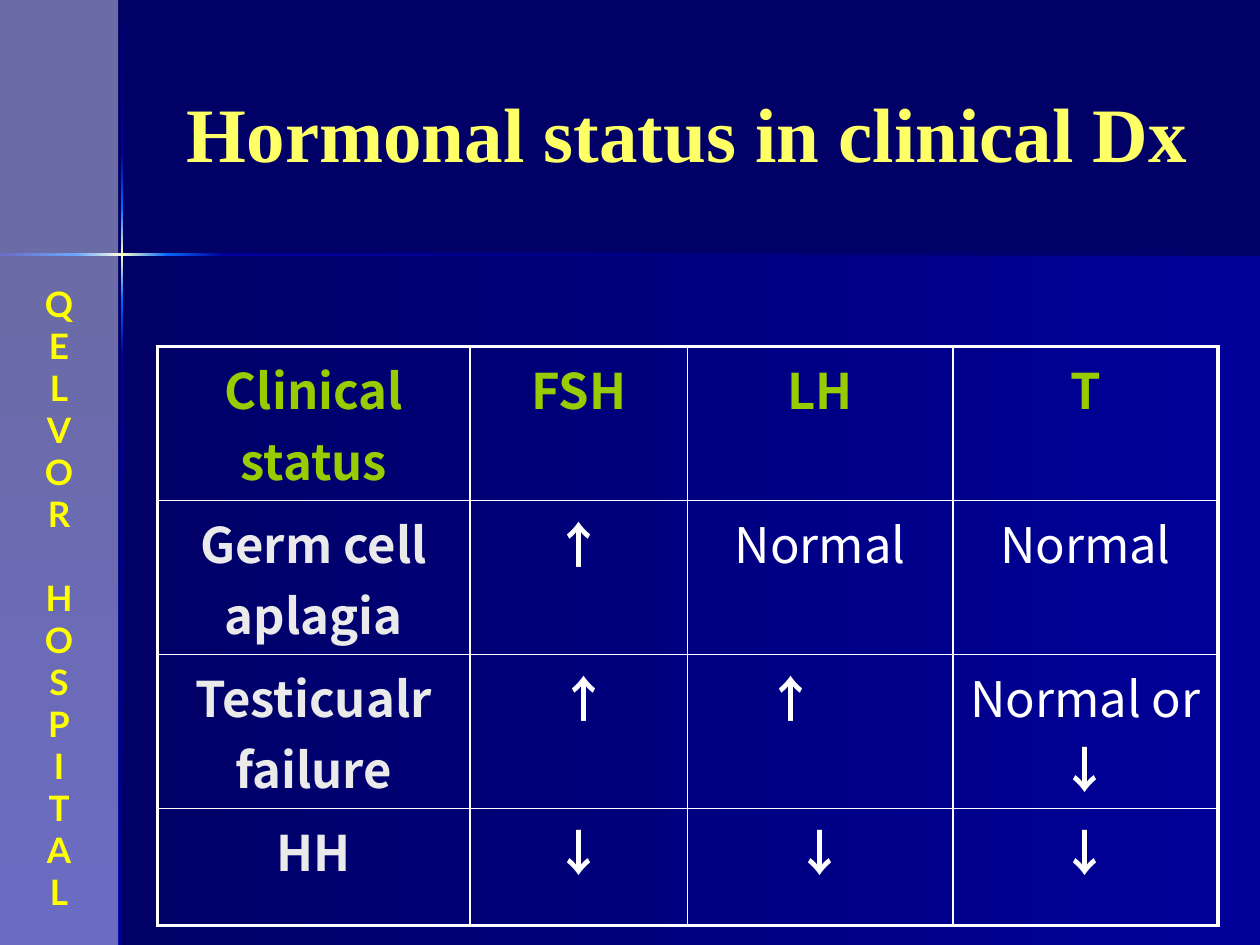
from itertools import pairwise
from lxml.etree import SubElement as Sub
from pptx import Presentation
from pptx.dml.color import RGBColor
from pptx.enum.shapes import MSO_SHAPE as SHAPE
from pptx.enum.text import MSO_ANCHOR as ANCHOR, PP_ALIGN as ALIGN
from pptx.oxml.ns import qn
from pptx.util import Pt


def rgb(code):
    return RGBColor.from_string(code)


def put_run(p, text, size, name, color, bold):
    r = p.add_run()
    r.text = text
    for key, value in dict(size=Pt(size), name=name, bold=bold).items():
        setattr(r.font, key, value)
    r.font.color.rgb = rgb(color)
    Sub(r.font._element, qn("a:ea"), typeface=name)


NAVY, BLUE, AZURE, CREAM, WHITE = "000066", "000099", "0066FF", "FFFFCC", "FFFFFF"
SANS = "Noto Sans CJK KR"

prs = Presentation()
prs.slide_width, prs.slide_height = Pt(720), Pt(540)
s = prs.slides.add_slide(prs.slide_layouts[5])
s.background.fill.solid()
s.background.fill.fore_color.rgb = rgb(NAVY)

bands = [
    (69.84, 145.44, 650.16, 394.56, NAVY, BLUE, 0),
    (0, 145.44, 69.84, 394.56, NAVY, BLUE, 270),
]
column_stops = [(0.7, NAVY), (87.1, BLUE), (118.8, AZURE), (145.1, CREAM),
                (171.4, AZURE), (203, BLUE), (540, NAVY)]
row_stops = [(0, BLUE), (43.5, AZURE), (69.6, CREAM),
             (95.8, AZURE), (127.4, BLUE), (720, NAVY)]
for (y0, c0), (y1, c1) in pairwise(column_stops):
    bands.append((69.1, y0, 1.44, y1 - y0, c0, c1, 270))
for (x0, c0), (x1, c1) in pairwise(row_stops):
    bands.append((x0, 144.7, x1 - x0, 1.44, c0, c1, 0))

for x, y, w, h, start, end, angle in bands:
    sp = s.shapes.add_shape(SHAPE.RECTANGLE, Pt(x), Pt(y), Pt(w), Pt(h))
    sp.shadow.inherit = False
    sp.line.fill.background()
    sp.fill.gradient()
    sp.fill.gradient_angle = angle
    for stop, color in zip(sp.fill.gradient_stops, (start, end)):
        stop.color.rgb = rgb(color)

sp = s.shapes.add_shape(SHAPE.RECTANGLE, 0, 0, Pt(67.5), Pt(540))
sp.shadow.inherit = False
sp.line.fill.background()
sp.fill.solid()
sp.fill.fore_color.rgb = rgb(WHITE)
Sub(sp._element.spPr.find(".//" + qn("a:srgbClr")), qn("a:alpha"), val="42000")

tf = s.shapes.add_textbox(Pt(5.76), Pt(157.7), Pt(56), Pt(371)).text_frame
tf.word_wrap = True
for n, word in enumerate(["QELVOR", "HOSPITAL"]):
    for i, letter in enumerate(word):
        p = tf.add_paragraph() if n or i else tf.paragraphs[0]
        p.alignment = ALIGN.CENTER
        if n and not i:
            p.space_before = Pt(24)
        put_run(p, letter, 20, "Lato", "FFFF00", True)

title = s.shapes.title
title.left, title.top, title.width, title.height = Pt(78), Pt(30), Pt(630), Pt(90)
tf = title.text_frame
tf.vertical_anchor = ANCHOR.MIDDLE
tf.word_wrap = True
p = tf.paragraphs[0]
p.alignment = ALIGN.CENTER
put_run(p, "Hormonal status in clinical Dx", 44, "Times New Roman", "FFFF66", True)

rows = [
    ["Clinical status", "FSH", "LH", "T"],
    ["Germ cell aplagia", "↑", "Normal", "Normal"],
    ["Testicualr failure", "↑", "↑", "Normal or ↓"],
    ["HH", "↓", "↓", "↓"],
]
widths, heights = [178.5, 124.5, 151.5, 151.5], [88, 88, 88, 67]
indents = {(2, 1): 6.3, (2, 2): 38}
table = s.shapes.add_table(4, 4, Pt(90), Pt(198), Pt(sum(widths)), Pt(sum(heights))).table
table.first_row = table.horz_banding = False
for col, width in zip(table.columns, widths):
    col.width = Pt(width)
for row, height in zip(table.rows, heights):
    row.height = Pt(height)

for i, texts in enumerate(rows):
    for j, text in enumerate(texts):
        cell = table.cell(i, j)
        tcPr = cell._tc.get_or_add_tcPr()
        outer = {"lnL": j == 0, "lnR": j == 3, "lnT": i == 0, "lnB": i == 3}
        for side, thick in outer.items():
            ln = Sub(tcPr, qn("a:" + side), w=str(Pt(2.25 if thick else 1)))
            Sub(Sub(ln, qn("a:solidFill")), qn("a:srgbClr"), val=WHITE)
        cell.fill.background()
        p = cell.text_frame.paragraphs[0]
        p.alignment = ALIGN.LEFT if (i, j) == (2, 2) else ALIGN.CENTER
        if (i, j) in indents:
            p._p.get_or_add_pPr().set("marL", str(Pt(indents[i, j])))
        color = "99CC00" if i == 0 else "EAEAEA" if j == 0 else WHITE
        words, arrow = (text[:-1], text[-1]) if text[-1] in "↑↓" else (text, "")
        if words:
            put_run(p, words, 28, SANS, color, i == 0 or j == 0)
        if arrow:
            put_run(p, arrow, 28, SANS, color, True)

prs.save("out.pptx")
